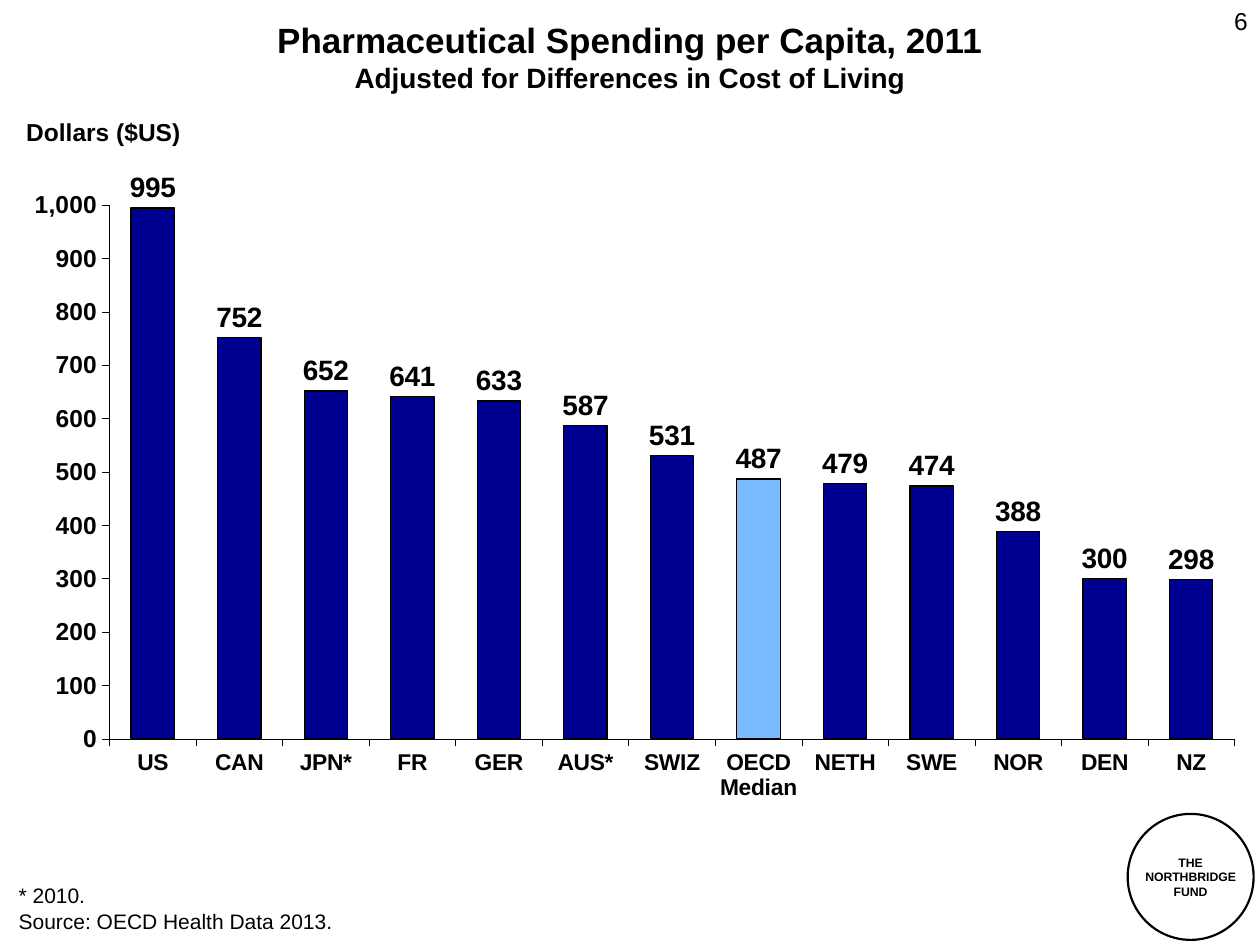
"""Build a slide with a column chart of pharmaceutical spending per capita."""
from dataclasses import dataclass

from lxml import etree
from pptx import Presentation
from pptx.chart.data import CategoryChartData
from pptx.dml.color import RGBColor
from pptx.enum.chart import XL_CHART_TYPE, XL_LABEL_POSITION, XL_TICK_MARK
from pptx.enum.shapes import MSO_SHAPE
from pptx.enum.text import MSO_ANCHOR, MSO_AUTO_SIZE, PP_ALIGN
from pptx.oxml.ns import qn
from pptx.util import Pt

COLUMNS = XL_CHART_TYPE.COLUMN_CLUSTERED
OUTSIDE_END = XL_LABEL_POSITION.OUTSIDE_END
TICK_OUT, TICK_NONE = XL_TICK_MARK.OUTSIDE, XL_TICK_MARK.NONE
OVAL = MSO_SHAPE.OVAL
TOP, MIDDLE = MSO_ANCHOR.TOP, MSO_ANCHOR.MIDDLE
NO_FIT = MSO_AUTO_SIZE.NONE
LEFT, CENTER, RIGHT = PP_ALIGN.LEFT, PP_ALIGN.CENTER, PP_ALIGN.RIGHT

SPENDING = {
    "US": 995, "CAN": 752, "JPN*": 652, "FR": 641, "GER": 633,
    "AUS*": 587, "SWIZ": 531, "OECD Median": 487, "NETH": 479,
    "SWE": 474, "NOR": 388, "DEN": 300, "NZ": 298,
}
PLOT_AREA = {"x": 0.085, "y": 0.067, "w": 0.916, "h": 0.79}


@dataclass(frozen=True)
class Theme:
    font: str = "Arial"
    ink: RGBColor = RGBColor(0x00, 0x00, 0x00)
    column: RGBColor = RGBColor(0x00, 0x00, 0x90)
    median: RGBColor = RGBColor(0x7A, 0xBA, 0xFF)
    title: float = 20
    subtitle: float = 16
    value: float = 16
    axis: float = 14
    category: float = 13
    note: float = 12
    badge: float = 7


def assign(target, values):
    for name, value in values.items():
        setattr(target, name, value)


class SlideBuilder:
    def __init__(self, slide, theme):
        self.slide, self.theme = slide, theme

    def style_font(self, font, size, bold):
        assign(font, {"name": self.theme.font, "size": Pt(size), "bold": bold})
        font.color.rgb = self.theme.ink

    def style_line(self, line, width):
        line.color.rgb = self.theme.ink
        line.width = Pt(width)

    def fill_text(self, frame, lines, size, bold, align):
        for index, line in enumerate(lines):
            paragraph = frame.add_paragraph() if index else frame.paragraphs[0]
            paragraph.alignment = align
            run = paragraph.add_run()
            run.text = line
            self.style_font(run.font, size, bold)

    def title(self, box, heading, subheading):
        title = self.slide.shapes.title
        assign(title, dict(zip(("left", "top", "width", "height"), map(Pt, box))))
        frame = title.text_frame
        assign(frame, {"auto_size": NO_FIT, "vertical_anchor": TOP, "word_wrap": True})
        self.fill_text(frame, [heading], self.theme.title, True, CENTER)
        paragraph = frame.paragraphs[0]
        paragraph.add_line_break()
        run = paragraph.add_run()
        run.text = subheading
        self.style_font(run.font, self.theme.subtitle, True)

    def text(self, box, line, size, bold=False, align=LEFT):
        frame = self.slide.shapes.add_textbox(*map(Pt, box)).text_frame
        frame.word_wrap = True
        self.fill_text(frame, [line], size, bold, align)

    def badge(self, box, lines):
        circle = self.slide.shapes.add_shape(OVAL, *map(Pt, box))
        circle.shadow.inherit = False
        circle.fill.background()
        self.style_line(circle.line, 1.25)
        assign(circle.text_frame, {
            "word_wrap": False, "vertical_anchor": MIDDLE, "margin_left": 0,
            "margin_right": 0, "margin_top": 0, "margin_bottom": 0,
        })
        self.fill_text(circle.text_frame, lines, self.theme.badge, True, CENTER)

    def axis(self, axis, size):
        assign(axis, {
            "major_tick_mark": TICK_OUT, "minor_tick_mark": TICK_NONE,
            "has_major_gridlines": False,
        })
        self.style_line(axis.format.line, 0.3)
        self.style_font(axis.tick_labels.font, size, True)

    def place_plot(self, chart):
        plot_area = chart.plots[0]._element.getparent()
        layout = plot_area.find(qn("c:layout"))
        if layout is None:
            layout = etree.Element(qn("c:layout"))
            plot_area.insert(0, layout)
        manual = etree.SubElement(layout, qn("c:manualLayout"))
        settings = {"layoutTarget": "inner", "xMode": "edge", "yMode": "edge"}
        for name, value in (settings | PLOT_AREA).items():
            etree.SubElement(manual, qn(f"c:{name}"), val=str(value))

    def column_chart(self, box, spending, highlight):
        data = CategoryChartData(number_format="#,##0")
        data.categories = list(spending)
        data.add_series("Series 1", list(spending.values()))
        chart = self.slide.shapes.add_chart(COLUMNS, *map(Pt, box), data).chart
        assign(chart, {"has_legend": False, "has_title": False})
        self.style_font(chart.font, self.theme.axis, True)
        self.axis(chart.category_axis, self.theme.category)
        self.axis(chart.value_axis, self.theme.axis)
        assign(chart.value_axis, {
            "minimum_scale": 0, "maximum_scale": 1000, "major_unit": 100,
        })
        number_format = {"number_format": "#,##0", "number_format_is_linked": False}
        assign(chart.value_axis.tick_labels, number_format)

        assign(chart.plots[0], {"gap_width": 100, "vary_by_categories": False})
        columns = chart.plots[0].series[0]
        median = columns.points[list(spending).index(highlight)]
        for part, color in ((columns, self.theme.column), (median, self.theme.median)):
            part.format.fill.solid()
            part.format.fill.fore_color.rgb = color
            self.style_line(part.format.line, 0.75)
        labels = columns.data_labels
        assign(labels, {"show_value": True, "position": OUTSIDE_END} | number_format)
        self.style_font(labels.font, self.theme.value, True)
        self.place_plot(chart)


def main():
    deck = Presentation()
    assign(deck, {"slide_width": Pt(720), "slide_height": Pt(540)})
    theme = Theme()
    builder = SlideBuilder(deck.slides.add_slide(deck.slide_layouts[5]), theme)
    builder.text((552, 0, 168, 37.5), "6", theme.axis, align=RIGHT)
    builder.title((0, 7.2, 720, 63.4), "Pharmaceutical Spending per Capita, 2011",
                  "Adjusted for Differences in Cost of Living")
    builder.column_chart((3.6, 91.5, 702, 386), SPENDING, "OECD Median")
    builder.text((3.6, 501, 88, 21.6), "* 2010.", theme.note)
    builder.text((3.6, 515.5, 292, 21.6), "Source: OECD Health Data 2013.", theme.note)
    builder.badge((644.4, 465.1, 72, 72), ["THE", "NORTHBRIDGE", "FUND"])
    builder.text((7.9, 63.4, 110, 24.5), "Dollars ($US)", theme.axis, bold=True)
    deck.save("out.pptx")


if __name__ == "__main__":
    main()
